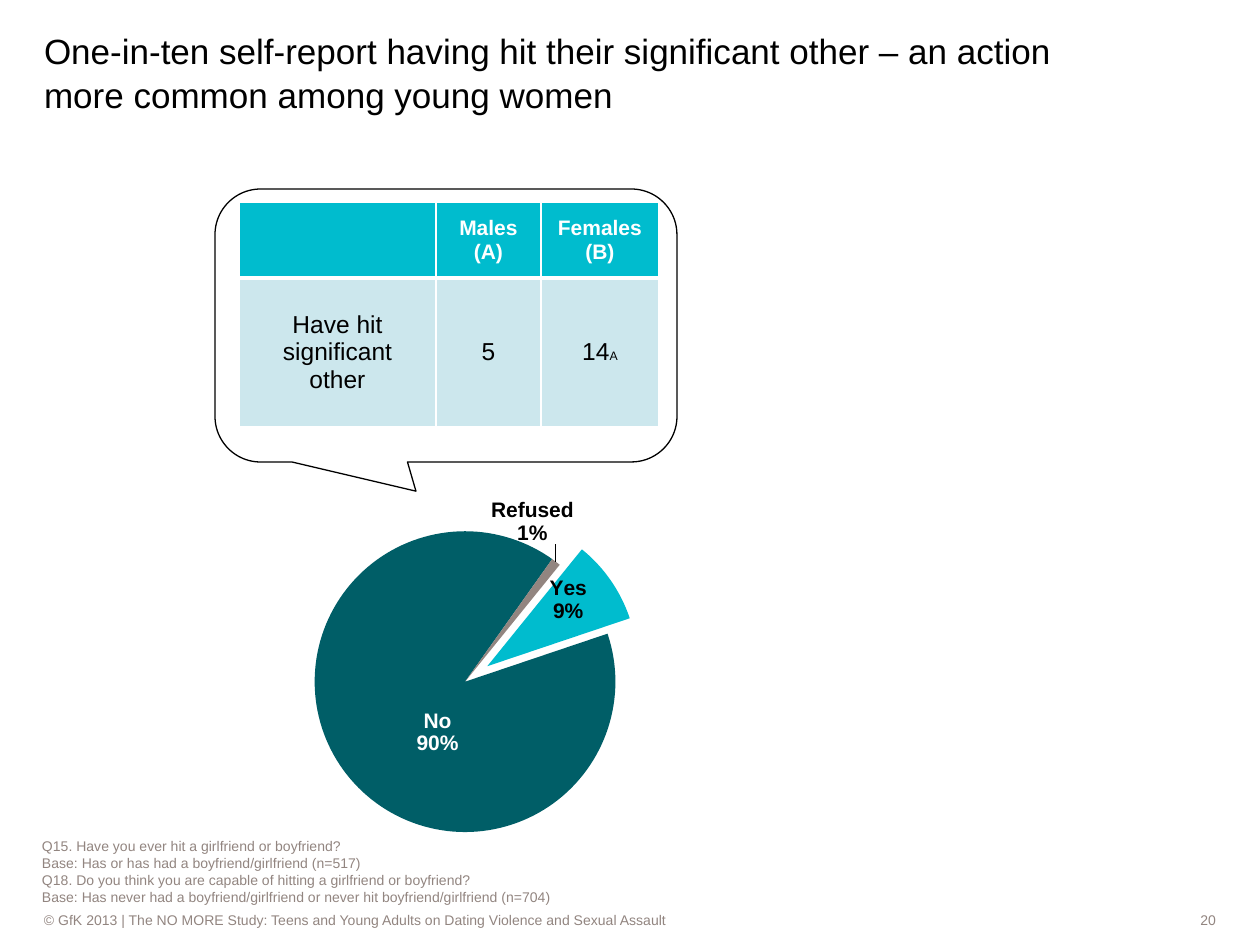
from lxml import etree
from pptx import Presentation
from pptx.chart.data import CategoryChartData
from pptx.dml.color import RGBColor
from pptx.enum.chart import XL_CHART_TYPE, XL_LABEL_POSITION
from pptx.enum.shapes import MSO_SHAPE
from pptx.enum.text import MSO_ANCHOR, MSO_AUTO_SIZE, PP_ALIGN
from pptx.oxml import parse_xml
from pptx.oxml.ns import nsdecls, qn
from pptx.util import Pt

LEFT, CENTER, RIGHT = PP_ALIGN.LEFT, PP_ALIGN.CENTER, PP_ALIGN.RIGHT
MIDDLE, BOTTOM = MSO_ANCHOR.MIDDLE, MSO_ANCHOR.BOTTOM
CALLOUT = MSO_SHAPE.ROUNDED_RECTANGULAR_CALLOUT
PIE, LABEL_CENTER = XL_CHART_TYPE.PIE, XL_LABEL_POSITION.CENTER
EMU_PER_PX = 914400 / 126
FONT = "Arial"
COLORS = {"black": "000000", "white": "FFFFFF", "gray": "928580",
          "cyan": "00BCCE", "teal": "005E67", "pale": "CCE7ED"}


def px(*lengths):
    return [round(length * EMU_PER_PX) for length in lengths]


def color(name):
    return RGBColor.from_string(COLORS[name])


def paint(target, name):
    target.fill.solid()
    target.fill.fore_color.rgb = color(name)


def style(font, size, name, bold=False):
    font.name, font.size, font.bold = FONT, Pt(size), bold
    font.color.rgb = color(name)


def write(frame, lines, size, name, align=LEFT, bold=False):
    """Each line is a list of texts, or of (text, size) pairs."""
    for index, line in enumerate(lines):
        para = frame.add_paragraph() if index else frame.paragraphs[0]
        para.alignment = align
        for piece in line:
            text, points = piece if isinstance(piece, tuple) else (piece, size)
            span = para.add_run()
            span.text = text
            style(span.font, points, name, bold)


def set_frame(frame, anchor, bottom=0):
    frame.word_wrap = True
    frame.auto_size = MSO_AUTO_SIZE.NONE
    frame.vertical_anchor = anchor
    frame.margin_left = frame.margin_top = frame.margin_right = 0
    frame.margin_bottom = px(bottom)[0]


def add_title(page, text):
    title = page.shapes.title
    title.left, title.top, title.width, title.height = px(44, 32, 1068, 84)
    set_frame(title.text_frame, BOTTOM)
    write(title.text_frame, [[text]], 20, "black")
    title.text_frame.paragraphs[0].line_spacing = 1.05


def add_note(page, at, lines, anchor=MIDDLE, align=LEFT, fill=None, bottom=0):
    box = page.shapes.add_textbox(*px(*at))
    if fill:
        paint(box, fill)
    set_frame(box.text_frame, anchor, bottom)
    write(box.text_frame, [[line] for line in lines], 8, "gray", align)


def add_borders(cell, bottom_width):
    properties = cell._tc.get_or_add_tcPr()
    widths = {"lnL": 1, "lnR": 1, "lnT": 1, "lnB": bottom_width}
    for index, (tag, width) in enumerate(widths.items()):
        properties.insert(index, parse_xml(
            f'<a:{tag} {nsdecls("a")} w="{Pt(width)}"><a:solidFill>'
            f'<a:srgbClr val="{COLORS["white"]}"/></a:solidFill></a:{tag}>'))


def add_gender_table(page):
    rows = [
        [[], [["Males"], ["(A)"]], [["Females"], ["(B)"]]],
        [[["Have hit significant other"]], [["5"]], [["14", ("A", 7)]]],
    ]
    widths, heights = (197, 105, 118), (76, 149)
    table = page.shapes.add_table(
        2, 3, *px(239, 202, sum(widths), sum(heights))).table
    table.horz_banding = False
    for column, width in zip(table.columns, px(*widths)):
        column.width = width
    for row, height in zip(table.rows, px(*heights)):
        row.height = height
    looks = [("cyan", 12, "white", True, 3), ("pale", 14, "black", False, 1)]
    for r, (fill, size, ink, bold, border) in enumerate(looks):
        for c, lines in enumerate(rows[r]):
            cell = table.cell(r, c)
            paint(cell, fill)
            cell.vertical_anchor = MIDDLE
            write(cell.text_frame, lines, size, ink, CENTER, bold)
            add_borders(cell, border)


def add_callout(page):
    callout = page.shapes.add_shape(CALLOUT, *px(215, 189, 462, 273))
    callout.shadow.inherit = False
    callout.fill.background()
    callout.line.color.rgb = color("black")
    callout.line.width = Pt(0.75)
    for index, value in enumerate((-0.065, 0.607, 0.167)):
        callout.adjustments[index] = value


def manual_layout(x, y, size=None):
    values = [("x", x), ("y", y)]
    modes = []
    if size:
        modes = [("layoutTarget", "inner"), ("xMode", "edge"), ("yMode", "edge")]
        values += [("w", size[0]), ("h", size[1])]
    parts = "".join(f'<c:{tag} val="{value}"/>' for tag, value in modes + values)
    return parse_xml(f'<c:layout {nsdecls("c")}><c:manualLayout>{parts}'
                     '</c:manualLayout></c:layout>')


def format_label(element):
    """Show the category above the value."""
    element.find(qn("c:showCatName")).set("val", "1")
    element.find(qn("c:showVal")).set("val", "1")
    separator = etree.Element(qn("c:separator"))
    separator.text = "\n"
    element.find(qn("c:showBubbleSize")).addnext(separator)


def add_pie(page):
    data = CategoryChartData(number_format="0%")
    data.categories = ["Yes", "No", "Refused"]
    data.add_series("Series 1", (0.09, 0.9, 0.01))
    chart = page.shapes.add_chart(PIE, *px(296, 399, 549, 588), data).chart
    chart.has_legend = chart.has_title = False
    style(chart.font, 18, "black")

    # Plot placement and rotation
    plot = chart.plots[0]
    plot.vary_by_categories = True
    area = chart._chartSpace.find(".//" + qn("c:plotArea"))
    for old in area.findall(qn("c:layout")):
        area.remove(old)
    area.insert(0, manual_layout(0.034, 0.2, (0.548, 0.562)))
    pie = area.find(qn("c:pieChart"))
    for old in pie.findall(qn("c:firstSliceAng")):
        pie.remove(old)
    etree.SubElement(pie, qn("c:firstSliceAng")).set("val", "39")

    # Labels shared by the series
    series = plot.series[0]
    labels = series.data_labels
    style(labels.font, 12, "black", True)
    labels.number_format, labels.number_format_is_linked = "0%", False
    labels.position = LABEL_CENTER
    format_label(labels._element)

    # Slices: fill, label colour, label offset
    slices = [("cyan", "black", 0.035, -0.04), ("teal", "white", 0.06, 0.01),
              ("gray", "black", 0.04, -0.17)]
    for index, (fill, ink, x, y) in enumerate(slices):
        point = series.points[index]
        paint(point.format, fill)
        style(point.data_label.font, 12, ink, True)
        point.data_label.position = LABEL_CENTER
        label = labels._element.findall(qn("c:dLbl"))[index]
        label.find(qn("c:idx")).addnext(manual_layout(x, y))
        format_label(label)

    # Pull out the "Yes" slice
    explosion = etree.Element(qn("c:explosion"))
    explosion.set("val", "18")
    pie.find(".//" + qn("c:dPt")).find(qn("c:spPr")).addprevious(explosion)


def main():
    deck = Presentation()
    deck.slide_width, deck.slide_height = px(1260, 945)
    page = deck.slides.add_slide(deck.slide_layouts[5])

    # Footer
    add_note(page, (44, 910, 973, 20),
             ["© GfK 2013 | The NO MORE Study: Teens and Young Adults on "
              "Dating Violence and Sexual Assault"], fill="white")
    add_note(page, (1037, 910, 179, 20), ["20"], align=RIGHT, fill="white")

    add_title(page, "One-in-ten self-report having hit their significant other "
                    "– an action more common among young women")
    add_gender_table(page)
    add_callout(page)
    add_pie(page)

    # Question wording and bases
    add_note(page, (42, 837, 1171, 73), [
        "Q15. Have you ever hit a girlfriend or boyfriend?",
        "Base: Has or has had a boyfriend/girlfriend (n=517)",
        "Q18. Do you think you are capable of hitting a girlfriend or boyfriend?",
        "Base: Has never had a boyfriend/girlfriend or never hit "
        "boyfriend/girlfriend (n=704)"], anchor=BOTTOM, bottom=5)
    deck.save("out.pptx")


if __name__ == "__main__":
    main()
